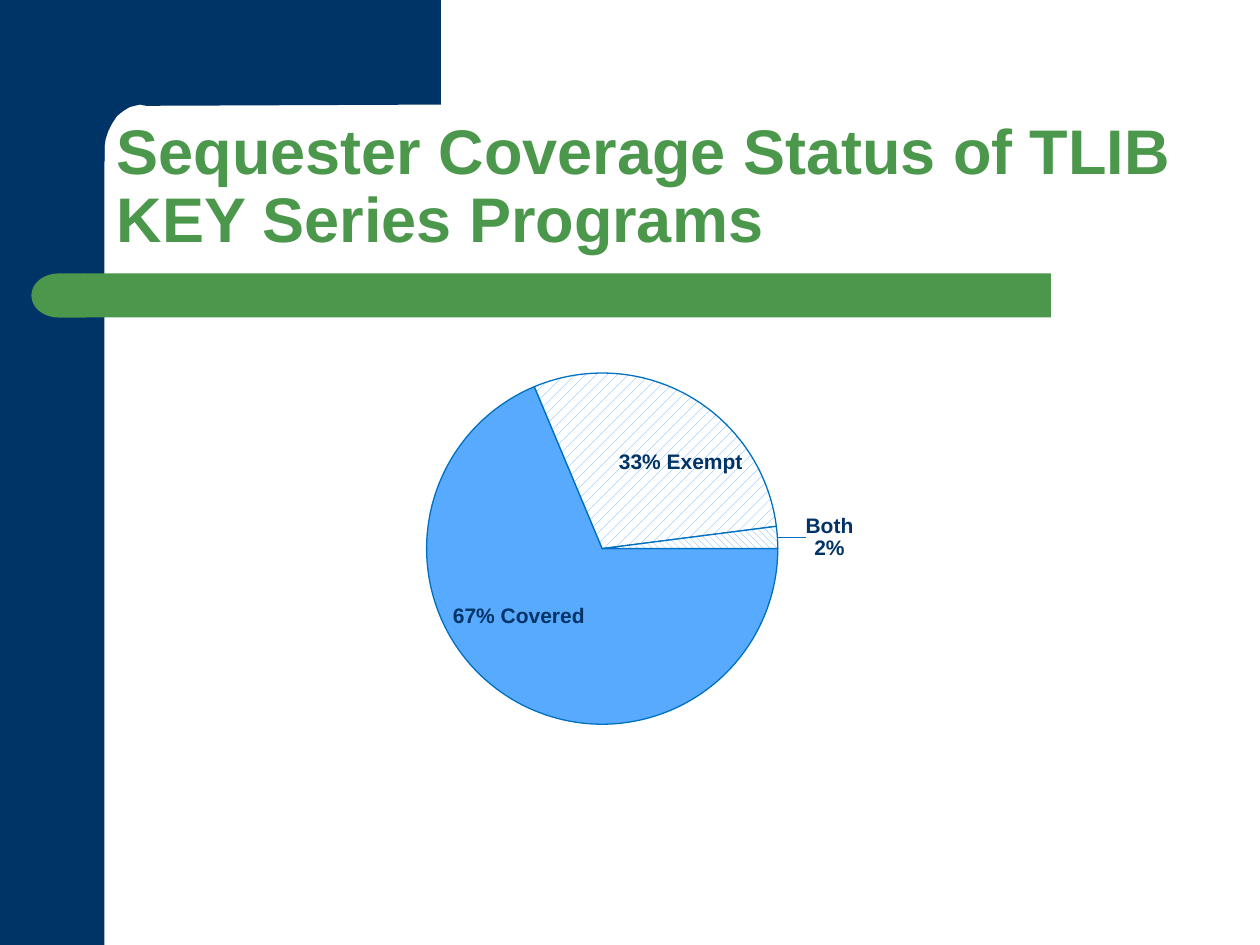
from lxml import etree
from pptx import Presentation
from pptx.chart.data import CategoryChartData
from pptx.dml.color import RGBColor
from pptx.enum.chart import XL_CHART_TYPE, XL_LABEL_POSITION
from pptx.enum.dml import MSO_PATTERN
from pptx.enum.shapes import MSO_SHAPE
from pptx.enum.text import MSO_ANCHOR
from pptx.oxml import parse_xml
from pptx.oxml.ns import nsdecls, qn
from pptx.util import Inches, Pt

PIE = XL_CHART_TYPE.PIE
CENTER, OUTSIDE = XL_LABEL_POSITION.CENTER, XL_LABEL_POSITION.OUTSIDE_END
DOTS, DIAGONAL = MSO_PATTERN.PERCENT_20, MSO_PATTERN.WIDE_DOWNWARD_DIAGONAL
RECTANGLE, DELAY = MSO_SHAPE.RECTANGLE, MSO_SHAPE.FLOWCHART_DELAY
BOTTOM = MSO_ANCHOR.BOTTOM
NAVY, GREEN, BLUE, LINE_BLUE, WHITE = "003366", "4B974B", "58AAFF", "0070C0", "FFFFFF"


def color(hex_string):
    return RGBColor.from_string(hex_string)


def manual_layout(left, top, extra=""):
    """Return a c:layout element; for a label, left and top are offsets."""
    return parse_xml(
        f'<c:layout {nsdecls("c")}><c:manualLayout>{extra}'
        f'<c:x val="{left}"/><c:y val="{top}"/></c:manualLayout></c:layout>'
    )


presentation = Presentation()
presentation.slide_width, presentation.slide_height = Inches(10), Inches(7.5)
slide = presentation.slides.add_slide(presentation.slide_layouts[6])
shapes = slide.shapes

# Frame: side band, corner piece with a rounded inner edge, and green bar
side_band = shapes.add_shape(RECTANGLE, 0, 0, Inches(0.83), Inches(7.5))

corner_points = [
    (3.5, 0.83), (1.16, 0.84), (1.11, 0.83), (1.03, 0.85), (0.98, 0.88),
    (0.93, 0.92), (0.89, 0.98), (0.86, 1.04), (0.84, 1.1), (0.83, 1.16),
    (0.83, 1.28), (0.5, 1.28), (0.5, 0),
]
builder = shapes.build_freeform(Inches(3.5), 0)
builder.add_line_segments([(Inches(x), Inches(y)) for x, y in corner_points])
corner = builder.convert_to_shape()

bar = shapes.add_shape(
    RECTANGLE, Inches(0.67), Inches(2.17), Inches(7.67), Inches(0.35))
bar_end = shapes.add_shape(
    DELAY, Inches(0.25), Inches(2.17), Inches(0.43), Inches(0.35))
bar_end._element.spPr.find(qn("a:xfrm")).set("flipH", "1")

for shape, fill in ((side_band, NAVY), (corner, NAVY), (bar, GREEN), (bar_end, GREEN)):
    shape.shadow.inherit = False
    shape.fill.solid()
    shape.fill.fore_color.rgb = color(fill)
    shape.line.fill.background()

# Title
title = shapes.add_textbox(Inches(0.83), Inches(0.83), Inches(8.67), Inches(1.25))
title.text_frame.word_wrap = True
title.text_frame.vertical_anchor = BOTTOM
title.text_frame.text = "Sequester Coverage Status of TLIB KEY Series Programs"
paragraph = title.text_frame.paragraphs[0]
paragraph.line_spacing = 0.9
font = paragraph.runs[0].font
font.name, font.size, font.bold = "Arial", Pt(36), True
font.color.rgb = color(GREEN)

# Pie chart
chart_data = CategoryChartData()
chart_data.categories = ["Covered", "Exempt", "Both"]
chart_data.add_series("Series 1", (68, 29, 2))
chart = shapes.add_chart(
    PIE, Inches(2.25), Inches(1.83), Inches(5.5), Inches(4.04), chart_data).chart
chart.has_title = False
chart.has_legend = False
chart.font.name, chart.font.size = "Arial", Pt(10)
chart.font.color.rgb = color(NAVY)

plot = chart.plots[0]
plot.vary_by_categories = True
pie = plot._element
angle = pie.find(qn("c:firstSliceAng"))
if angle is None:
    angle = etree.SubElement(pie, qn("c:firstSliceAng"))
angle.set("val", "90")

plot_area = pie.getparent()
old_layout = plot_area.find(qn("c:layout"))
if old_layout is not None:
    plot_area.remove(old_layout)
plot_layout = manual_layout(
    0.15, 0.28,
    '<c:layoutTarget val="inner"/><c:xMode val="edge"/><c:yMode val="edge"/>')
for tag, size in (("c:w", 0.62), ("c:h", 0.69)):
    etree.SubElement(plot_layout[0], qn(tag)).set("val", str(size))
plot_area.insert(0, plot_layout)

series = plot.series[0]
labels = series.data_labels
labels.show_percentage = True
labels.show_category_name = True
labels.show_value = False
labels.font.size, labels.font.bold = Pt(12), True
labels.font.color.rgb = color(NAVY)
leader_lines = labels._element.find(qn("c:showLeaderLines"))
if leader_lines is None:
    leader_lines = etree.SubElement(labels._element, qn("c:showLeaderLines"))
leader_lines.set("val", "1")

series.format.line.color.rgb = color(LINE_BLUE)
series.format.line.width = Pt(0.75)

# Pattern, label text, label position, label offset
slices = [
    (None, "67% Covered", CENTER, (-0.05, -0.01)),
    (DOTS, "33% Exempt", CENTER, (0.05, -0.02)),
    (DIAGONAL, None, OUTSIDE, (0.03, 0)),
]
for index, (pattern, text, position, offset) in enumerate(slices):
    point = series.points[index]
    fill = point.format.fill
    if pattern is None:
        fill.solid()
    else:
        fill.patterned()
        fill.pattern = pattern
        fill.back_color.rgb = color(WHITE)
    fill.fore_color.rgb = color(BLUE)
    point.format.line.color.rgb = color(LINE_BLUE)
    point.format.line.width = Pt(0.75)

    label = point.data_label
    if text:
        label.text_frame.text = text
        font = label.text_frame.paragraphs[0].runs[0].font
    else:
        font = label.font
    font.name, font.size, font.bold = "Arial", Pt(12), True
    font.color.rgb = color(NAVY)
    label.position = position

    label_xml = labels._element.findall(qn("c:dLbl"))[index]
    label_xml.insert(1, manual_layout(*offset))
    for tag, shown in (("c:showVal", "0"), ("c:showCatName", "1"), ("c:showPercent", "1")):
        label_xml.find(qn(tag)).set("val", shown)
    etree.SubElement(label_xml, qn("c:separator")).text = "\n"

presentation.save("out.pptx")
